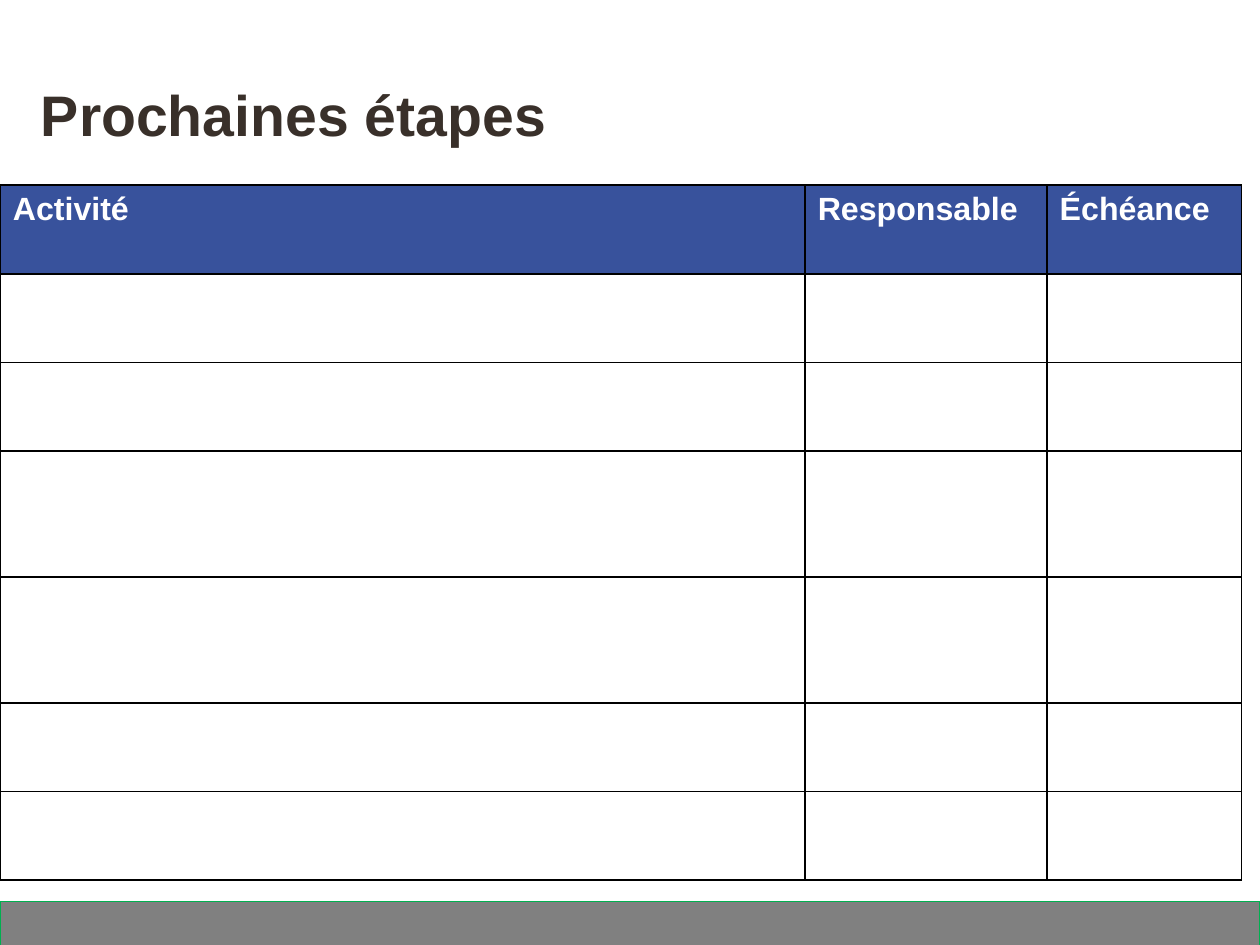
from lxml import etree
from pptx import Presentation
from pptx.dml.color import RGBColor
from pptx.enum.shapes import MSO_SHAPE
from pptx.oxml.ns import qn
from pptx.util import Cm, Pt

RECTANGLE = MSO_SHAPE.RECTANGLE
FONT = "Arial"
BROWN = RGBColor(0x39, 0x30, 0x2A)
BLUE = RGBColor(0x38, 0x52, 0x9C)
WHITE = RGBColor(0xFF, 0xFF, 0xFF)
BLACK = RGBColor(0x00, 0x00, 0x00)
GRAY = RGBColor(0x80, 0x80, 0x80)
GREEN = RGBColor(0x00, 0xB0, 0x50)

SLIDE_WIDTH = Cm(24.89)
SLIDE_HEIGHT = Cm(18.67)
HEADERS = ["Activité", "Responsable", "Échéance"]
COLUMN_WIDTHS = [Cm(15.9), Cm(4.78), Cm(3.84)]
SHORT_ROW = Cm(1.75)
TALL_ROW = Cm(2.49)
ROW_HEIGHTS = [SHORT_ROW] * 3 + [TALL_ROW] * 2 + [SHORT_ROW] * 2


def style_font(font, size, color):
    font.name = FONT
    font.size = Pt(size)
    font.bold = True
    font.color.rgb = color


def add_footer_band(slide):
    sp = slide.shapes.add_shape(RECTANGLE, 0, Cm(17.81), SLIDE_WIDTH, Cm(0.94))
    sp.shadow.inherit = False
    sp.fill.solid()
    sp.fill.fore_color.rgb = GRAY
    sp.line.color.rgb = GREEN
    sp.line.width = Pt(0.75)


def add_title(slide, text):
    sp = slide.shapes.add_textbox(Cm(0.81), Cm(1.47), Cm(18.49), Cm(0.81))
    tf = sp.text_frame
    tf.word_wrap = True
    tf.margin_left = tf.margin_right = tf.margin_bottom = 0
    tf.margin_top = Cm(0.1)
    tf.text = text
    style_font(tf.paragraphs[0].runs[0].font, 32, BROWN)


def set_borders(cell, color, width):
    tc_pr = cell._tc.get_or_add_tcPr()
    for side in ("a:lnL", "a:lnR", "a:lnT", "a:lnB"):
        ln = etree.SubElement(tc_pr, qn(side), w=str(width))
        fill = etree.SubElement(ln, qn("a:solidFill"))
        etree.SubElement(fill, qn("a:srgbClr"), val=str(color))


def add_steps_table(slide):
    table = slide.shapes.add_table(
        len(ROW_HEIGHTS), len(HEADERS), 0, Cm(3.66),
        sum(COLUMN_WIDTHS), sum(ROW_HEIGHTS),
    ).table
    table.horz_banding = False
    for column, width in zip(table.columns, COLUMN_WIDTHS):
        column.width = width
    for row, height in zip(table.rows, ROW_HEIGHTS):
        row.height = height
    for cell in table.iter_cells():
        set_borders(cell, BLACK, Pt(1))
        cell.fill.background()
    for cell, header in zip(table.rows[0].cells, HEADERS):
        cell.fill.solid()
        cell.fill.fore_color.rgb = BLUE
        cell.text_frame.text = header
        style_font(cell.text_frame.paragraphs[0].runs[0].font, 18, WHITE)


def main():
    prs = Presentation()
    prs.slide_width = SLIDE_WIDTH
    prs.slide_height = SLIDE_HEIGHT
    slide = prs.slides.add_slide(prs.slide_layouts[6])
    add_footer_band(slide)
    add_title(slide, "Prochaines étapes")
    add_steps_table(slide)
    prs.save("out.pptx")


if __name__ == "__main__":
    main()
